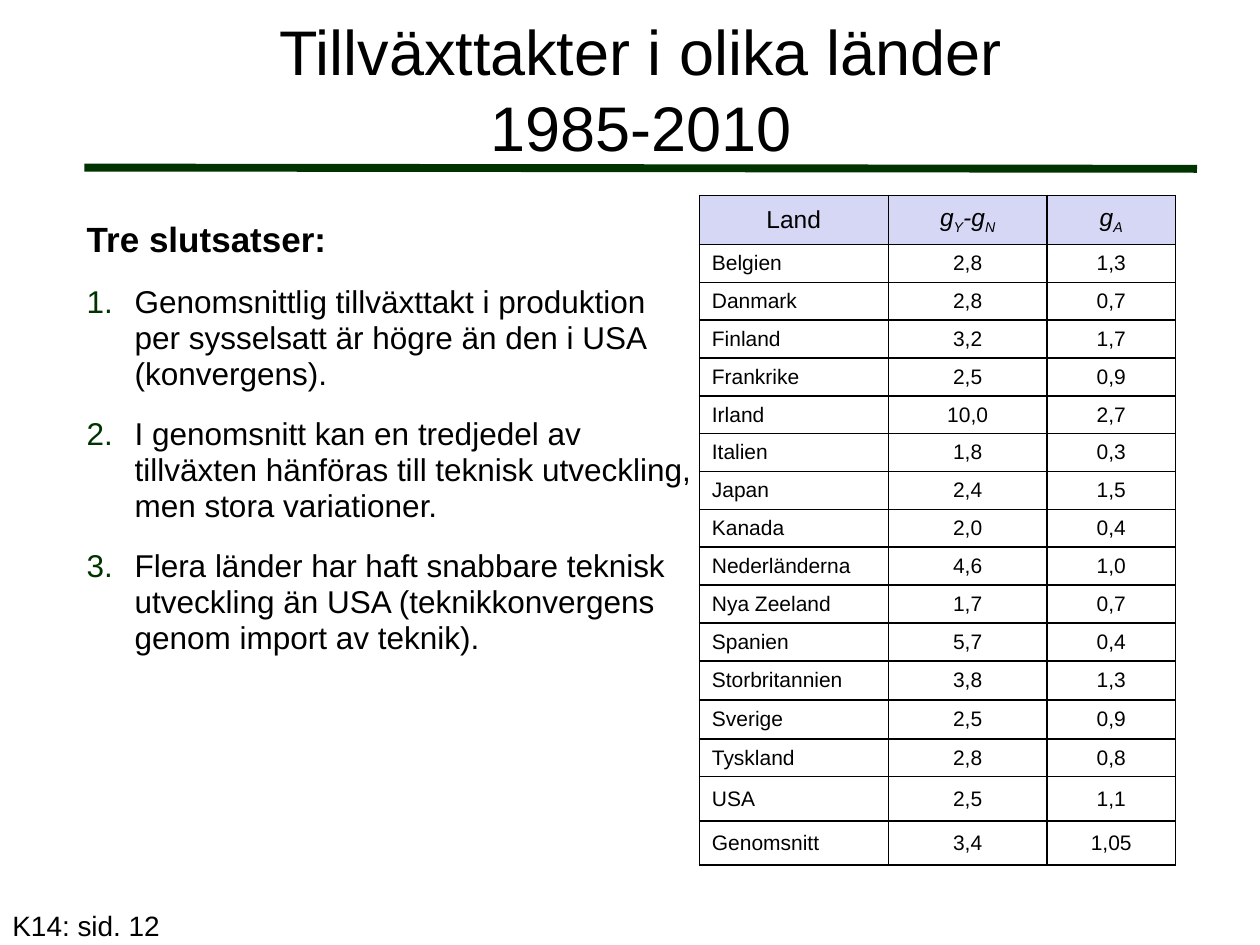
from lxml.etree import SubElement
from pptx import Presentation
from pptx.dml.color import RGBColor
from pptx.enum.shapes import MSO_CONNECTOR as Connector
from pptx.enum.text import MSO_ANCHOR as Anchor, PP_ALIGN as Align
from pptx.oxml.ns import qn
from pptx.util import Inches, Pt

# Content
TITLE = ("Tillväxttakter i olika länder", "1985-2010")
HEADING = "Tre slutsatser:"
CONCLUSIONS = [
    "Genomsnittlig tillväxttakt i produktion per sysselsatt är högre än den i USA (konvergens).",
    "I genomsnitt kan en tredjedel av tillväxten hänföras till teknisk utveckling, "
    "men stora variationer.",
    "Flera länder har haft snabbare teknisk utveckling än USA "
    "(teknikkonvergens genom import av teknik).",
]
REFERENCE = "K14: sid. 12"
# Header cells: (text, is subscript) pieces
HEADER = [
    [("Land", False)],
    [("g", False), ("Y", True), ("-g", False), ("N", True)],
    [("g", False), ("A", True)],
]
GROWTH = [
    ("Belgien", "2,8", "1,3"),
    ("Danmark", "2,8", "0,7"),
    ("Finland", "3,2", "1,7"),
    ("Frankrike", "2,5", "0,9"),
    ("Irland", "10,0", "2,7"),
    ("Italien", "1,8", "0,3"),
    ("Japan", "2,4", "1,5"),
    ("Kanada", "2,0", "0,4"),
    ("Nederländerna", "4,6", "1,0"),
    ("Nya Zeeland", "1,7", "0,7"),
    ("Spanien", "5,7", "0,4"),
    ("Storbritannien", "3,8", "1,3"),
    ("Sverige", "2,5", "0,9"),
    ("Tyskland", "2,8", "0,8"),
    ("USA", "2,5", "1,1"),
    ("Genomsnitt", "3,4", "1,05"),
]

# Look
BLACK = RGBColor(0x00, 0x00, 0x00)
GREEN = RGBColor(0x00, 0x33, 0x00)
LAVENDER = RGBColor(0xD6, 0xD6, 0xF5)
FONT = "Arial"

# Grid
MARGIN, CONTENT_WIDTH = 0.67, 8.83
COLUMNS = [1.5, 1.26, 1.02]
HEADER_ROW, BODY_ROW = 0.39, 0.29
TALLER_ROWS = {"Belgien": 0.3, "Storbritannien": 0.31, "Sverige": 0.31,
               "USA": 0.35, "Genomsnitt": 0.35}


def add_span(para, text, size, bold=False, italic=False):
    span = para.add_run()
    span.text = text
    font = span.font
    font.name, font.size, font.bold, font.italic = FONT, Pt(size), bold, italic
    font.color.rgb = BLACK
    return span


def add_box(page, left, top, width, height):
    box = page.shapes.add_textbox(*map(Inches, (left, top, width, height)))
    box.text_frame.word_wrap = True
    return box.text_frame


def number_para(para):
    props = para._p.get_or_add_pPr()
    indent = Inches(0.38)
    props.set("marL", str(indent))
    props.set("indent", str(-indent))
    color = SubElement(props, qn("a:buClr"))
    SubElement(color, qn("a:srgbClr"), val=str(GREEN))
    SubElement(props, qn("a:buFont"), typeface=FONT)
    SubElement(props, qn("a:buAutoNum"), type="arabicPeriod")


def style_cell(cell, fill=None):
    cell.vertical_anchor = Anchor.MIDDLE
    props = cell._tc.get_or_add_tcPr()
    for side in ("a:lnL", "a:lnR", "a:lnT", "a:lnB"):
        line = SubElement(props, qn(side), w=str(Pt(1)))
        solid = SubElement(line, qn("a:solidFill"))
        SubElement(solid, qn("a:srgbClr"), val=str(BLACK))
    if fill is None:
        cell.fill.background()
    else:
        cell.fill.solid()
        cell.fill.fore_color.rgb = fill


def add_title(page):
    frame = add_box(page, MARGIN, 0.08, CONTENT_WIDTH, 1.24)
    frame.vertical_anchor = Anchor.MIDDLE
    para = frame.paragraphs[0]
    para.alignment = Align.CENTER
    first, second = TITLE
    add_span(para, first, 36)
    para.add_line_break()
    add_span(para, second, 36)


def add_rule(page):
    ends = (MARGIN, 1.33, MARGIN + CONTENT_WIDTH, 1.34)
    rule = page.shapes.add_connector(Connector.STRAIGHT, *map(Inches, ends))
    rule.line.color.rgb = GREEN
    rule.line.width = Pt(4.5)
    SubElement(rule._element.spPr, qn("a:effectLst"))


def add_growth_table(page):
    heights = [HEADER_ROW] + [TALLER_ROWS.get(row[0], BODY_ROW) for row in GROWTH]
    table = page.shapes.add_table(
        len(heights), len(COLUMNS), Inches(5.55), Inches(1.55),
        Inches(sum(COLUMNS)), Inches(sum(heights))).table
    table.first_row = table.horz_banding = False
    for column, width in zip(table.columns, COLUMNS):
        column.width = Inches(width)
    for row, height in zip(table.rows, heights):
        row.height = Inches(height)

    # Header with subscripts
    for c, pieces in enumerate(HEADER):
        cell = table.cell(0, c)
        style_cell(cell, LAVENDER)
        para = cell.text_frame.paragraphs[0]
        para.alignment = Align.CENTER
        for text, subscript in pieces:
            span = add_span(para, text, 14, italic=c > 0)
            if subscript:
                span.font._element.set("baseline", "-25000")

    # Countries
    for r, values in enumerate(GROWTH, start=1):
        for c, text in enumerate(values):
            cell = table.cell(r, c)
            style_cell(cell)
            para = cell.text_frame.paragraphs[0]
            para.alignment = Align.CENTER if c else Align.LEFT
            add_span(para, text, 12)


def add_conclusions(page):
    frame = add_box(page, 0.59, 1.7, 5, 3.61)
    for i, text in enumerate([HEADING] + CONCLUSIONS):
        para = frame.add_paragraph() if i else frame.paragraphs[0]
        size = 18 if i else 20
        para.line_spacing = 0.95
        para.space_before, para.space_after = Pt(12), Pt(size / 10)
        if i:
            number_para(para)
        add_span(para, text, size, bold=i == 0)


def main():
    deck = Presentation()
    deck.slide_width, deck.slide_height = Inches(10), Inches(7.5)
    page = deck.slides.add_slide(deck.slide_layouts[6])
    add_rule(page)
    add_title(page)
    add_growth_table(page)
    reference = add_box(page, 0, 7.16, 2.08, 0.37).paragraphs[0]
    add_span(reference, REFERENCE, 16)
    add_conclusions(page)
    deck.save("out.pptx")


if __name__ == "__main__":
    main()
